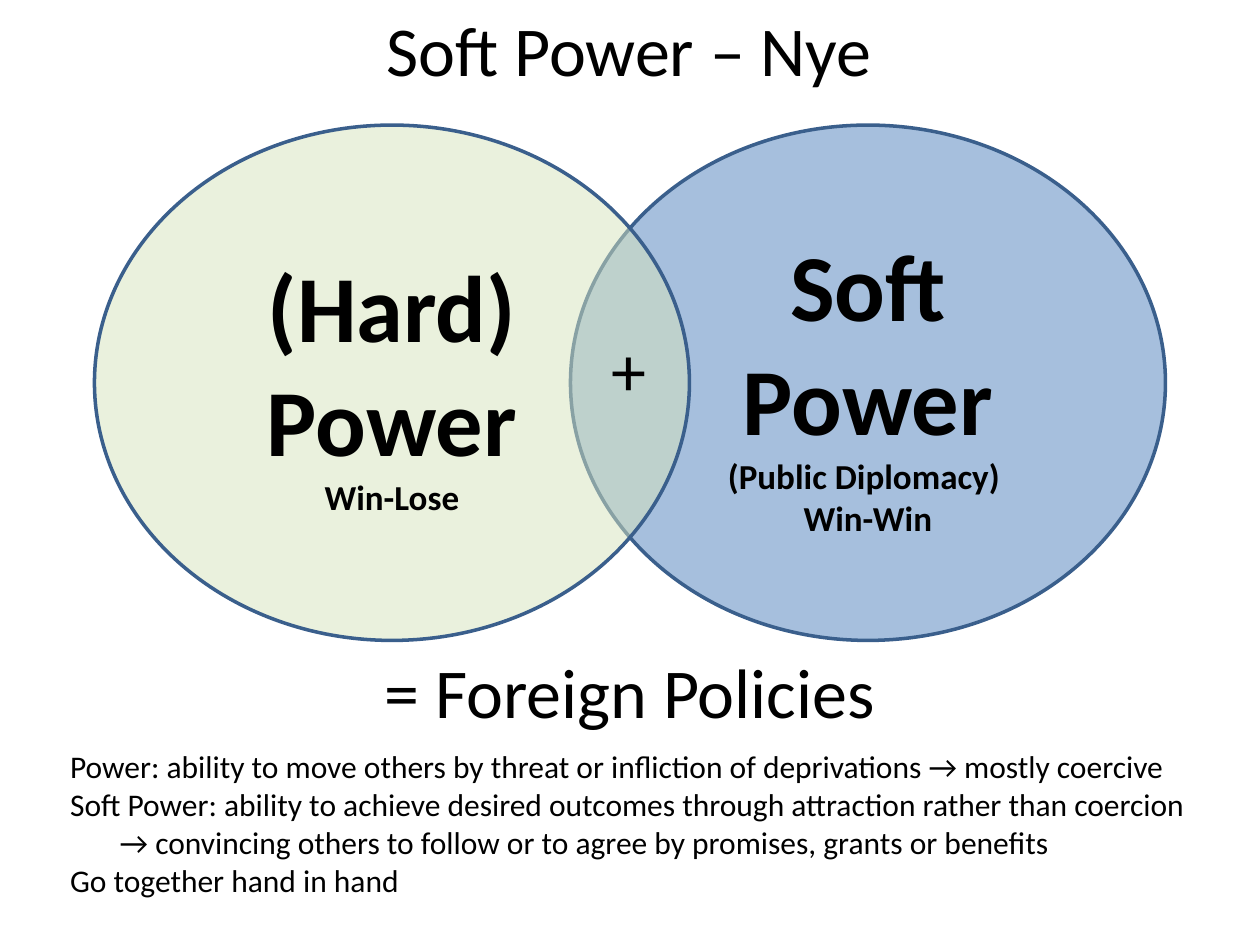
from lxml import etree
from pptx import Presentation
from pptx.dml.color import RGBColor
from pptx.enum.shapes import MSO_SHAPE
from pptx.enum.text import MSO_ANCHOR, PP_ALIGN
from pptx.oxml.ns import qn
from pptx.util import Pt

BLACK = RGBColor(0x00, 0x00, 0x00)
BLUE = RGBColor(0x4F, 0x81, 0xBD)
GREEN = RGBColor(0xD7, 0xE4, 0xBD)
OUTLINE = RGBColor(0x3A, 0x5F, 0x8C)
FONT = "Calibri"
ELLIPSE = MSO_SHAPE.OVAL
MIDDLE = MSO_ANCHOR.MIDDLE
CENTER = PP_ALIGN.CENTER
LEFT = PP_ALIGN.LEFT


def write_lines(tf, lines, align, bold=False):
    for i, (text, size) in enumerate(lines):
        p = tf.paragraphs[0] if i == 0 else tf.add_paragraph()
        p.text = text
        p.alignment = align
        for r in p.runs:
            r.font.name = FONT
            r.font.size = Pt(size)
            r.font.bold = bold
            r.font.color.rgb = BLACK


def add_label(s, box, text):
    tf = s.shapes.add_textbox(*map(Pt, box)).text_frame
    tf.word_wrap = False
    tf.vertical_anchor = MIDDLE
    write_lines(tf, [(text, 40)], CENTER)


def add_circle(s, box, color, lines):
    sp = s.shapes.add_shape(ELLIPSE, *map(Pt, box))
    sp.shadow.inherit = False
    sp.fill.solid()
    sp.fill.fore_color.rgb = color
    clr = sp.fill._xPr.find(qn("a:solidFill"))[0]
    etree.SubElement(clr, qn("a:alpha")).set("val", "50000")
    sp.line.color.rgb = OUTLINE
    sp.line.width = Pt(2)
    tf = sp.text_frame
    tf.word_wrap = True
    tf.vertical_anchor = MIDDLE
    write_lines(tf, lines, CENTER, bold=True)


def add_venn(s, box):
    left, top, width, height = box
    circle_w = 340
    add_circle(s, (left + width - circle_w, top, circle_w, height), BLUE,
               [("Soft Power", 54), ("(Public Diplomacy) ", 20), ("Win-Win", 20)])
    add_circle(s, (left, top, circle_w, height), GREEN,
               [("(Hard) Power", 54), ("Win-Lose", 20)])


def add_definitions(s, box):
    tf = s.shapes.add_textbox(*map(Pt, box)).text_frame
    tf.word_wrap = True
    lines = [
        "Power: ability to move others by threat or infliction of deprivations → mostly coercive",
        "Soft Power: ability to achieve desired outcomes through attraction rather than coercion "
        "→ convincing others to follow or to agree by promises, grants or benefits",
        "Go together hand in hand",
    ]
    write_lines(tf, [(text, 18) for text in lines], LEFT)
    for p in tf.paragraphs:
        pPr = p._p.get_or_add_pPr()
        pPr.set("marL", str(Pt(28.35)))
        pPr.set("indent", str(-Pt(28.35)))


def main():
    prs = Presentation()
    prs.slide_width, prs.slide_height = Pt(720), Pt(540)
    s = prs.slides.add_slide(prs.slide_layouts[6])
    add_label(s, (211.5, 0, 296, 55.7), "Soft Power – Nye")
    add_venn(s, (54, 71.5, 612, 294.5))
    add_definitions(s, (33, 423.5, 667.5, 94.5))
    add_label(s, (342, 183, 34.5, 55.7), "+")
    add_label(s, (211, 366.5, 297.5, 55.7), "= Foreign Policies")
    prs.save("out.pptx")


if __name__ == "__main__":
    main()
